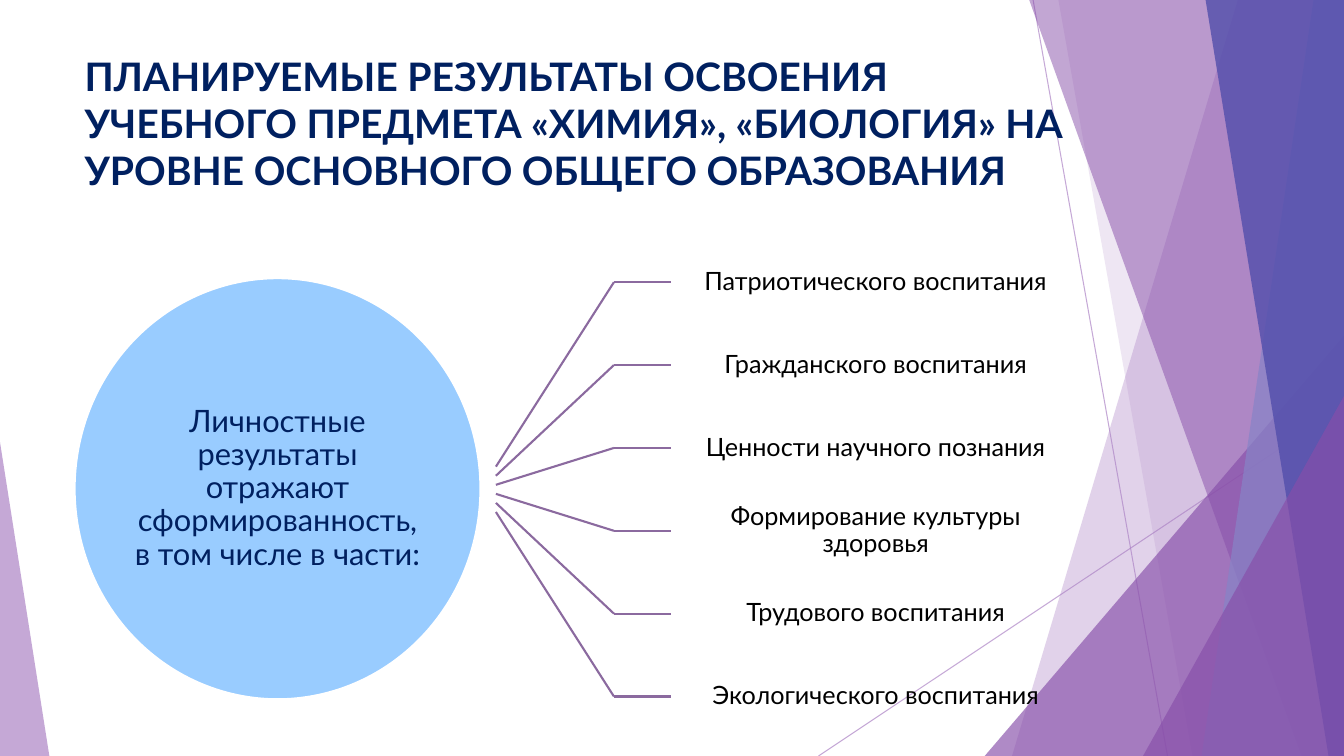
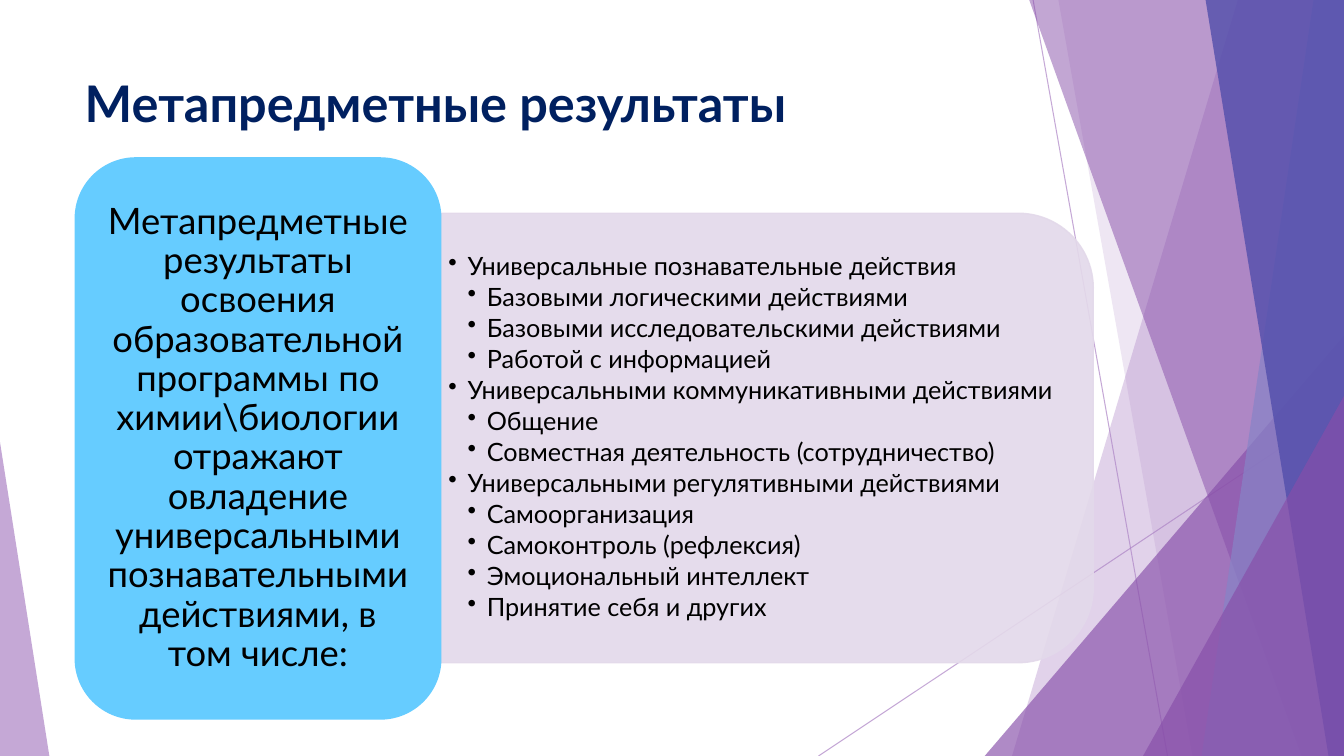
from lxml.etree import SubElement
from pptx import Presentation
from pptx.dml.color import RGBColor
from pptx.enum.shapes import MSO_CONNECTOR as CONN, MSO_SHAPE as SHAPE
from pptx.enum.text import MSO_ANCHOR as ANCHOR, MSO_AUTO_SIZE as AUTO, PP_ALIGN as ALIGN
from pptx.oxml.ns import qn
from pptx.util import Inches, Pt

W, H = Inches(13.33), Inches(7.5)
FONT = "Lato"
NAVY = RGBColor(0x00, 0x20, 0x60)
BLACK = RGBColor(0x00, 0x00, 0x00)
WHITE = RGBColor(0xFF, 0xFF, 0xFF)
LILAC = RGBColor(0xAD, 0x84, 0xC6)
PURPLE = RGBColor(0x87, 0x4E, 0xA9)
LAVENDER = RGBColor(0x87, 0x84, 0xC7)
INDIGO = RGBColor(0x52, 0x4E, 0xAB)
MAUVE = RGBColor(0x8B, 0x6A, 0x9F)
PALE = RGBColor(0xE3, 0xD9, 0xEA)
LIGHT_BLUE = RGBColor(0x99, 0xCC, 0xFF)
SKY = RGBColor(0x66, 0xCC, 0xFF)

LEFT = 5.55
RAYS = [((76.87, 0), (86.87, 100)), ((100, 53.7), (60.9, 100))]
BANDS = [
    (92.1, 75.3, LILAC, 36),
    (78.75, 88.73, LILAC, 20),
    (76.58, 96.83, PURPLE, 50),
    (97.73, 89.4, LAVENDER, 70),
    (89.7, 98.85, INDIGO, 80),
]
AREAS = [
    "Патриотического воспитания",
    "Гражданского воспитания",
    "Ценности научного познания",
    "Формирование культуры здоровья",
    "Трудового воспитания",
    "Экологического воспитания",
]
SKILLS = [
    ("Универсальные познавательные действия", [
        "Базовыми логическими действиями",
        "Базовыми исследовательскими действиями",
        "Работой с информацией",
    ]),
    ("Универсальными коммуникативными действиями", [
        "Общение",
        "Совместная деятельность (сотрудничество)",
    ]),
    ("Универсальными регулятивными действиями", [
        "Самоорганизация",
        "Самоконтроль (рефлексия)",
        "Эмоциональный интеллект",
        "Принятие себя и других",
    ]),
]


def across(share):
    return round(W * share / 100)


def down(share):
    return round(H * share / 100)


def box(x, y, w, h):
    return across(x), down(y), across(w), down(h)


def set_alpha(sp, percent):
    for color in sp.element.find(qn("p:spPr")).iter(qn("a:srgbClr")):
        SubElement(color, qn("a:alpha")).set("val", str(percent * 1000))


def paint(sp, fill, alpha=100, line=None, width=1.5):
    sp.shadow.inherit = False
    sp.fill.solid()
    sp.fill.fore_color.rgb = fill
    if line is None:
        sp.line.fill.background()
    else:
        sp.line.color.rgb = line
        sp.line.width = Pt(width)
    if alpha < 100:
        set_alpha(sp, alpha)
    return sp


def add_line(s, start, end, color, width, alpha=100):
    c = s.shapes.add_connector(CONN.STRAIGHT, across(start[0]), down(start[1]),
                               across(end[0]), down(end[1]))
    c.line.color.rgb = color
    c.line.width = Pt(width)
    SubElement(c.element.find(qn("p:spPr")), qn("a:effectLst"))
    if alpha < 100:
        set_alpha(c, alpha)
    return c


def add_band(s, top, bottom, color, alpha):
    fb = s.shapes.build_freeform(across(top), 0)
    fb.add_line_segments([(W, 0), (W, H), (across(bottom), H)], close=True)
    return paint(fb.convert_to_shape(), color, alpha)


def add_wedge(s, x, y, w, apex, color, alpha):
    sp = s.shapes.add_shape(SHAPE.ISOSCELES_TRIANGLE, *box(x, y, w, 100 - y))
    sp.adjustments[0] = apex
    return paint(sp, color, alpha)


def add_decor(s, layout):
    rays = [add_line(s, start, end, LILAC, 0.75, 70) for start, end in RAYS]
    bands = [add_band(s, *band) for band in BANDS]
    big = add_wedge(s, 73.27, 44.4, 26.73, 1, PURPLE, 66)
    small = add_wedge(s, 85.05, 52.4, 14.95, 1, PURPLE, 66)
    corner = add_wedge(s, 0, 58.5, 3.67, 0, LILAC, 70)
    for sp in rays + bands[:2] + [big] + bands[2:] + [small, corner]:
        layout.shapes.element.append(sp.element)


def add_run(p, text, size, color, bold=False):
    r = p.add_run()
    r.text = text
    r.font.name = FONT
    r.font.size = Pt(size)
    r.font.bold = bold
    r.font.color.rgb = color


def set_title(s, lines, place, size):
    title = s.shapes.title
    title.left, title.top, title.width, title.height = box(*place)
    tf = title.text_frame
    tf.auto_size = AUTO.NONE
    tf.vertical_anchor = ANCHOR.TOP
    p = tf.paragraphs[0]
    p.alignment = ALIGN.LEFT
    for i, line in enumerate(lines):
        if i:
            p.add_line_break()
        add_run(p, line, size, NAVY, True)


def set_frame(sp, side, edge):
    tf = sp.text_frame
    tf.word_wrap = True
    tf.vertical_anchor = ANCHOR.MIDDLE
    tf.margin_left = tf.margin_right = Pt(side)
    tf.margin_top = tf.margin_bottom = Pt(edge)
    return tf


def write_centred(sp, text, size, color, side, edge):
    p = set_frame(sp, side, edge).paragraphs[0]
    p.alignment = ALIGN.CENTER
    p.line_spacing = 0.9
    add_run(p, text, size, color)


def add_bullet(p, text, level):
    step = Inches(0.19)
    pPr = p._p.get_or_add_pPr()
    pPr.set("marL", str(step * (level + 1)))
    pPr.set("indent", str(-step))
    SubElement(pPr, qn("a:buChar")).set("char", "•")
    p.level = level
    p.line_spacing = 0.9
    p.space_after = Pt(2.7)
    add_run(p, text, 18, BLACK)


def add_bullets(s, groups, place):
    tf = set_frame(s.shapes.add_textbox(*box(*place)), 5, 3)
    items = []
    for head, children in groups:
        items += [(head, 0)] + [(child, 1) for child in children]
    for i, (text, level) in enumerate(items):
        p = tf.add_paragraph() if i else tf.paragraphs[0]
        add_bullet(p, text, level)


def add_branch(s, i, text):
    pitch = 10.96
    y = 37.33 + i * pitch
    bend, end = (45.68, y), (49.95, y)
    add_line(s, (36.9, 61.73 + i * 1.2), bend, MAUVE, 1.5)
    add_line(s, bend, end, MAUVE, 1.5)
    label = s.shapes.add_textbox(*box(end[0], y - pitch / 2, 30.4, pitch))
    write_centred(label, text, 18, BLACK, 10, 10)


def build_personal(s):
    set_title(s, ["ПЛАНИРУЕМЫЕ РЕЗУЛЬТАТЫ ОСВОЕНИЯ",
                  "УЧЕБНОГО ПРЕДМЕТА «ХИМИЯ», «БИОЛОГИЯ» НА "
                  "УРОВНЕ ОСНОВНОГО ОБЩЕГО ОБРАЗОВАНИЯ"],
              (LEFT, 6.27, 78.75, 20.53), 28)
    circle = s.shapes.add_shape(SHAPE.OVAL, *box(LEFT, 36.8, 30.2, 55.7))
    paint(circle, LIGHT_BLUE, line=WHITE)
    write_centred(circle, "Личностные результаты отражают сформированность, "
                  "в том числе в части:", 22, NAVY, 0, 0)
    for i, area in enumerate(AREAS):
        add_branch(s, i, area)


def build_meta(s):
    set_title(s, ["Метапредметные результаты"], (LEFT, 8.93, 70.5, 10.4), 36)
    panel = s.shapes.add_shape(SHAPE.ROUND_2_SAME_RECTANGLE,
                               *box(40.35, 14.8, 33.45, 86.27))
    panel.rotation = 90
    paint(panel, PALE, 90, PALE, 1)
    add_bullets(s, SKILLS, (32.85, 31.07, 46.9, 53.73))
    card = s.shapes.add_shape(SHAPE.ROUNDED_RECTANGLE, *box(LEFT, 20.8, 27.3, 74.4))
    paint(card, SKY)
    write_centred(card, "Метапредметные результаты освоения образовательной "
                  "программы по химии\\биологии отражают овладение универсальными "
                  "познавательными действиями, в том числе:", 26, BLACK, 8, 4)


def main():
    prs = Presentation()
    prs.slide_width, prs.slide_height = W, H
    layout = prs.slide_layouts[5]
    personal, meta = [prs.slides.add_slide(layout) for _ in range(2)]
    add_decor(personal, layout)
    build_personal(personal)
    build_meta(meta)
    prs.save("out.pptx")


if __name__ == "__main__":
    main()
